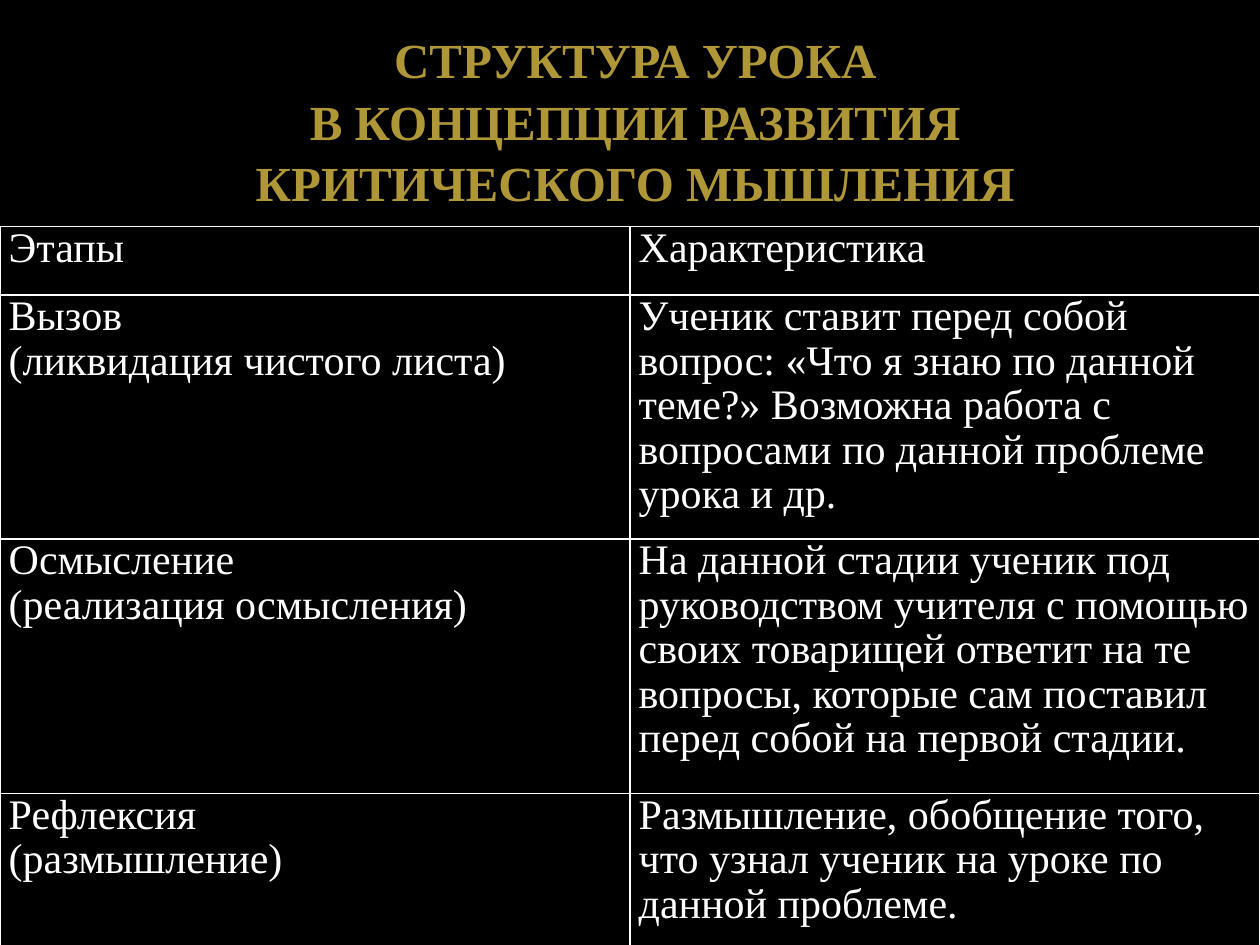
from lxml import etree
from pptx import Presentation
from pptx.dml.color import RGBColor
from pptx.enum.text import MSO_ANCHOR, MSO_AUTO_SIZE, PP_ALIGN
from pptx.oxml.ns import qn
from pptx.util import Pt

TOP = MSO_ANCHOR.TOP
GROW = MSO_AUTO_SIZE.SHAPE_TO_FIT_TEXT
CENTER = PP_ALIGN.CENTER

FONT = "Times New Roman"
BLACK, WHITE, GOLD = "000000", "FFFFFF", "AF9738"
TITLE = "СТРУКТУРА УРОКА\nВ КОНЦЕПЦИИ РАЗВИТИЯ КРИТИЧЕСКОГО МЫШЛЕНИЯ"
STAGES = [
    ("Этапы", "Характеристика"),
    ("Вызов\n(ликвидация чистого листа)",
     "Ученик ставит перед собой вопрос: «Что я знаю по данной теме?» "
     "Возможна работа с вопросами по данной проблеме урока и др."),
    ("Осмысление\n(реализация осмысления)",
     "На данной стадии ученик под руководством учителя с помощью своих "
     "товарищей ответит на те вопросы, которые сам поставил перед собой "
     "на первой стадии."),
    ("Рефлексия\n(размышление)",
     "Размышление, обобщение того, что узнал ученик на уроке по данной "
     "проблеме."),
]
HEIGHTS = [39, 139.5, 145.5, 87]


def color(code):
    return RGBColor.from_string(code)


def write(frame, text, size, code, space, bold=False, align=None):
    frame.text = text
    frame.word_wrap = True
    for para in frame.paragraphs:
        para.alignment = align
        para.line_spacing = space
        font = para.font
        font.name, font.size, font.bold = FONT, Pt(size), bold
        font.color.rgb = color(code)


def border(cell, code, width):
    """Draw all four edges; they must come before the fill in tcPr."""
    props = cell._tc.get_or_add_tcPr()
    for i, side in enumerate(("lnL", "lnR", "lnT", "lnB")):
        line = etree.Element(qn(f"a:{side}"), w=str(Pt(width)))
        fill = etree.SubElement(line, qn("a:solidFill"))
        etree.SubElement(fill, qn("a:srgbClr"), val=code)
        props.insert(i, line)


def add_title(slide):
    title = slide.shapes.title
    title.left, title.top = Pt(62), Pt(11.5)
    title.width, title.height = Pt(602), Pt(108.5)
    frame = title.text_frame
    write(frame, TITLE, 28, GOLD, 1.05, True, CENTER)
    frame.vertical_anchor = TOP
    frame.auto_size = GROW


def add_grid(slide):
    grid = slide.shapes.add_table(
        len(STAGES), 2, 0, Pt(129.5), Pt(720), Pt(sum(HEIGHTS))).table
    for row, height, texts in zip(grid.rows, HEIGHTS, STAGES):
        row.height = Pt(height)
        for cell, text in zip(row.cells, texts):
            cell.margin_left = cell.margin_right = Pt(5)
            cell.margin_top = cell.margin_bottom = 0
            cell.fill.solid()
            cell.fill.fore_color.rgb = color(BLACK)
            border(cell, WHITE, 1)
            write(cell.text_frame, text, 24, WHITE, 0.96)


def main():
    deck = Presentation()
    deck.slide_width, deck.slide_height = Pt(720), Pt(540)
    slide = deck.slides.add_slide(deck.slide_layouts.get_by_name("Title Only"))
    back = slide.background.fill
    back.solid()
    back.fore_color.rgb = color(BLACK)
    add_title(slide)
    add_grid(slide)
    deck.save("out.pptx")


if __name__ == "__main__":
    main()
